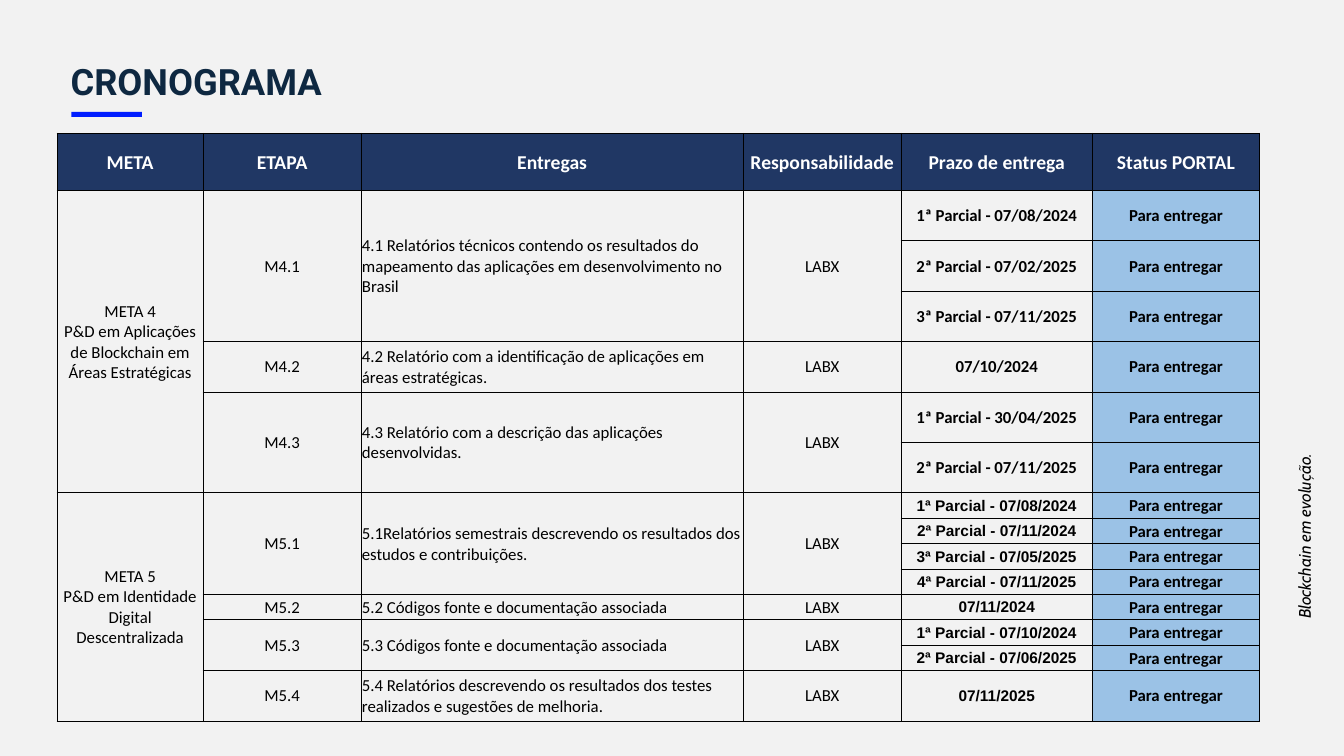
from copy import deepcopy

from lxml import etree
from pptx import Presentation
from pptx.dml.color import RGBColor
from pptx.enum.shapes import MSO_SHAPE
from pptx.enum.text import MSO_ANCHOR, PP_ALIGN
from pptx.oxml.ns import qn
from pptx.util import Cm, Pt

LEFT, CENTER = PP_ALIGN.LEFT, PP_ALIGN.CENTER
TOP, MIDDLE, BOTTOM = MSO_ANCHOR.TOP, MSO_ANCHOR.MIDDLE, MSO_ANCHOR.BOTTOM
RECT = MSO_SHAPE.RECTANGLE
NO_GRID = "{2D5ABB26-0587-4C30-8999-92F81FD0307C}"

TITLE = "CRONOGRAMA"
MOTTO = "Blockchain em evolução."
HEADS = ["META", "ETAPA", "Entregas", "Responsabilidade",
         "Prazo de entrega", "Status PORTAL"]
OWNER = "LABX"
STATUS = "Para entregar"
HEAD, TALL, LOW = 1.44, 1.27, 0.64
WIDTHS = [3.68, 3.98, 9.63, 3.98, 4.82, 4.21]

# Goal, font and size of its dates, then stages: code, delivery, row height, dates
GOALS = [
    ("META 4\nP&D em Aplicações de Blockchain em Áreas Estratégicas", "Calibri", 12, [
        ("M4.1", "4.1 Relatórios técnicos contendo os resultados do mapeamento "
         "das aplicações em desenvolvimento no Brasil", TALL,
         ["1ª Parcial - 07/08/2024", "2ª Parcial - 07/02/2025",
          "3ª Parcial - 07/11/2025"]),
        ("M4.2", "4.2 Relatório com a identificação de aplicações em áreas "
         "estratégicas.", TALL, ["07/10/2024"]),
        ("M4.3", "4.3 Relatório com a descrição das aplicações desenvolvidas.",
         TALL, ["1ª Parcial - 30/04/2025", "2ª Parcial - 07/11/2025"]),
    ]),
    ("META 5\nP&D em Identidade Digital Descentralizada", "Arial", 11, [
        ("M5.1", "5.1Relatórios semestrais descrevendo os resultados dos estudos "
         "e contribuições.", LOW,
         ["1ª Parcial - 07/08/2024", "2ª Parcial - 07/11/2024",
          "3ª Parcial - 07/05/2025", "4ª Parcial - 07/11/2025"]),
        ("M5.2", "5.2 Códigos fonte e documentação associada", LOW,
         ["07/11/2024"]),
        ("M5.3", "5.3 Códigos fonte e documentação associada", LOW,
         ["1ª Parcial - 07/10/2024", "2ª Parcial - 07/06/2025"]),
        ("M5.4", "5.4 Relatórios descrevendo os resultados dos testes realizados "
         "e sugestões de melhoria.", TALL, ["07/11/2025"]),
    ]),
]


def color(code):
    return RGBColor.from_string(code)


def write(frame, text, size=12, font="Calibri", ink="000000", bold=False,
          italic=False, align=CENTER, space=None):
    """Fill a text frame with one formatted paragraph; a newline is a line break."""
    frame.word_wrap = True
    para = frame.paragraphs[0]
    para.text = text
    para.alignment = align
    if space:
        para.line_spacing = space
    for run in para.runs:
        face = run.font
        face.name, face.size = font, Pt(size)
        face.bold, face.italic = bold, italic
        face.color.rgb = color(ink)
    for gap in para._p.findall(qn("a:br")):
        gap.append(deepcopy(para.runs[0]._r.rPr))


def add_text(slide, box, text, pads, anchor, **style):
    shape = slide.shapes.add_textbox(*map(Cm, box))
    frame = shape.text_frame
    frame.margin_left = frame.margin_right = Cm(pads[0])
    frame.margin_top = frame.margin_bottom = Cm(pads[1])
    frame.vertical_anchor = anchor
    write(frame, text, **style)
    return shape


def edge(cell):
    """Draw thin black borders on all four sides of a cell."""
    props = cell._tc.get_or_add_tcPr()
    for i, side in enumerate("LRTB"):
        line = etree.Element(qn("a:ln" + side), w=str(Pt(0.75)))
        fill = etree.SubElement(line, qn("a:solidFill"))
        etree.SubElement(fill, qn("a:srgbClr"), val="000000")
        props.insert(i, line)


def put(grid, row, col, text, span=1, **style):
    cell = grid.cell(row, col)
    if span > 1:
        cell.merge(grid.cell(row + span - 1, col))
    write(cell.text_frame, text, **style)


def add_plan(slide):
    stages = [stage for goal in GOALS for stage in goal[3]]
    heights = [HEAD] + [s[2] for s in stages for _ in s[3]]
    size = Cm(sum(WIDTHS)), Cm(sum(heights))
    frame = slide.shapes.add_table(len(heights), len(WIDTHS),
                                   Cm(1.44), Cm(3.36), *size)
    grid = frame.table
    grid.first_row = grid.horz_banding = False
    grid._tbl.tblPr.find(qn("a:tableStyleId")).text = NO_GRID
    for col, width in zip(grid.columns, WIDTHS):
        col.width = Cm(width)
    for row, height in zip(grid.rows, heights):
        row.height = Cm(height)

    for r in range(len(heights)):
        for c in range(len(WIDTHS)):
            cell = grid.cell(r, c)
            cell.vertical_anchor = MIDDLE
            cell.margin_left = cell.margin_right = cell.margin_top = Cm(0.02)
            cell.margin_bottom = 0
            tint = "203764" if r == 0 else "9BC2E6" if c == 5 else None
            if tint:
                cell.fill.solid()
                cell.fill.fore_color.rgb = color(tint)
            else:
                cell.fill.background()
            edge(cell)

    for c, head in enumerate(HEADS):
        put(grid, 0, c, head, size=14, ink="FFFFFF", bold=True)
    row = 1
    for goal, font, size, steps in GOALS:
        put(grid, row, 0, goal, sum(len(step[3]) for step in steps))
        for code, text, _, dates in steps:
            span = len(dates)
            put(grid, row, 1, code, span)
            put(grid, row, 2, text, span, align=LEFT)
            put(grid, row, 3, OWNER, span)
            for date in dates:
                put(grid, row, 4, date, font=font, size=size, bold=True)
                put(grid, row, 5, STATUS, bold=True)
                row += 1


def main():
    deck = Presentation()
    deck.slide_width, deck.slide_height = Cm(33.87), Cm(19.05)
    slide = deck.slides.add_slide(deck.slide_layouts[6])
    back = slide.background.fill
    back.solid()
    back.fore_color.rgb = color("F2F2F2")

    bar = slide.shapes.add_shape(RECT, Cm(1.8), Cm(2.82), Cm(1.78), Cm(0.13))
    bar.shadow.inherit = False
    bar.fill.solid()
    bar.fill.fore_color.rgb = color("001DFF")
    bar.line.fill.background()

    motto = add_text(slide, (30.4, 13, 4.93, 0.76), MOTTO, (0.25, 0.13), TOP,
                     font="Cabin", italic=True, align=LEFT)
    motto.rotation = 270
    add_text(slide, (1.78, 1.73, 30.3, 0.84), TITLE, (0, 0), BOTTOM, size=25.9,
             font="Roboto", ink="0E2841", bold=True, align=LEFT, space=0.7)
    add_plan(slide)
    deck.save("out.pptx")


if __name__ == "__main__":
    main()
